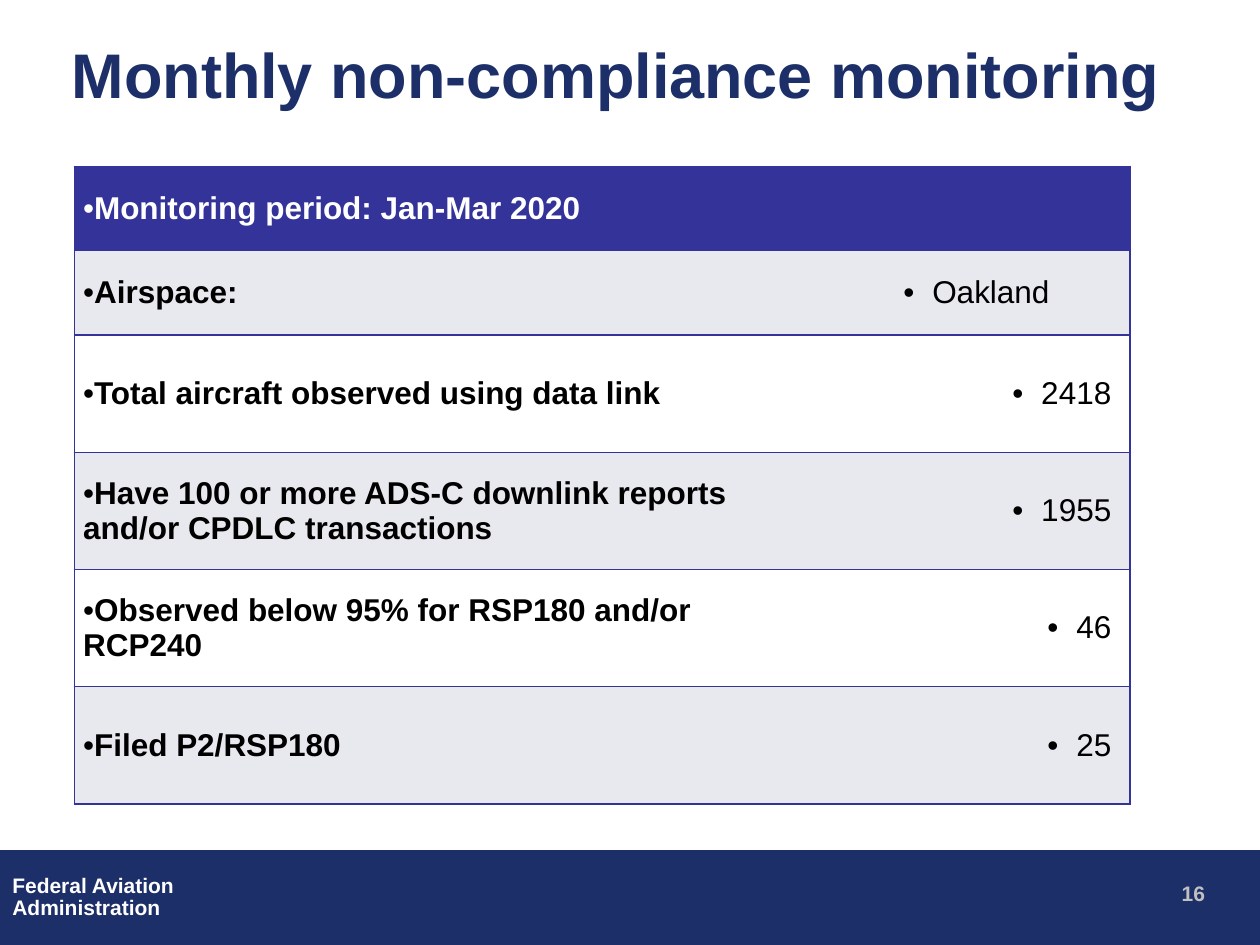
from typing import NamedTuple

from lxml import etree
from pptx import Presentation
from pptx.dml.color import RGBColor
from pptx.enum import shapes, text
from pptx.oxml import ns
from pptx.util import Inches, Pt

NAVY = RGBColor(0x1D, 0x2F, 0x68)
INDIGO = RGBColor(0x33, 0x33, 0x99)
PALE = RGBColor(0xE8, 0xE8, 0xEF)
SILVER = RGBColor(0xC0, 0xC0, 0xC0)
WHITE = RGBColor(0xFF, 0xFF, 0xFF)
BLACK = RGBColor(0, 0, 0)

LEFT, MID, RIGHT = text.PP_ALIGN.LEFT, text.PP_ALIGN.CENTER, text.PP_ALIGN.RIGHT


class Row(NamedTuple):
    label: str
    value: str
    height: float = 0.93
    align: text.PP_ALIGN = RIGHT
    pad: float = 0.15


ROWS = [
    Row("Monitoring period: Jan-Mar 2020", "", 0.67),
    Row("Airspace:", "Oakland", 0.67, MID, 0.07),
    Row("Total aircraft observed using data link", "2418"),
    Row("Have 100 or more ADS-C downlink reports and/or CPDLC transactions", "1955"),
    Row("Observed below 95% for RSP180 and/or RCP240", "46"),
    Row("Filed P2/RSP180", "25"),
]
COLS = [5.94, 2.44]


def style(para, size: float, color: RGBColor, bold: bool = True) -> None:
    font = para.font
    font.name, font.size, font.bold = "Arial", Pt(size), bold
    font.color.rgb = color


def add_bullet(para, hang: float) -> None:
    props = para._p.get_or_add_pPr()
    props.set("marL", str(Inches(hang)))
    props.set("indent", str(-Inches(hang)))
    etree.SubElement(props, ns.qn("a:buFont"), typeface="Arial")
    etree.SubElement(props, ns.qn("a:buChar"), char="•")


def set_edges(cell, shown: str) -> None:
    """Draw the sides named in shown (from L, R, T, B) and hide the others."""
    props = cell._tc.get_or_add_tcPr()
    for spot, side in enumerate("LRTB"):
        line = etree.Element(ns.qn(f"a:ln{side}"), w=str(Pt(1)))
        if side in shown:
            fill = etree.SubElement(line, ns.qn("a:solidFill"))
            etree.SubElement(fill, ns.qn("a:srgbClr"), val=str(INDIGO))
        else:
            etree.SubElement(line, ns.qn("a:noFill"))
        props.insert(spot, line)


def fill_cell(cell, words: str, fill: RGBColor, color: RGBColor, edges: str,
              bold: bool = True, align: text.PP_ALIGN = LEFT,
              side: float = 0.07, top: float = 0, hang: float = 0) -> None:
    cell.fill.solid()
    cell.fill.fore_color.rgb = fill
    set_edges(cell, edges)
    cell.vertical_anchor = text.MSO_ANCHOR.MIDDLE
    cell.margin_left = cell.margin_right = Inches(side)
    cell.margin_top = cell.margin_bottom = Inches(top)
    para = cell.text_frame.paragraphs[0]
    if words:
        para.text = words
        para.alignment = align
        add_bullet(para, hang)
    style(para, 18, color, bold)


def add_grid(slide) -> None:
    frame = slide.shapes.add_table(
        len(ROWS), len(COLS), Inches(0.59), Inches(1.32),
        Inches(sum(COLS)), Inches(sum(row.height for row in ROWS)))
    table = frame.table
    table.first_row = table.horz_banding = False
    for col, width in zip(table.columns, COLS):
        col.width = Inches(width)
    for i, row in enumerate(ROWS):
        table.rows[i].height = Inches(row.height)
        fill = INDIGO if i == 0 else PALE if i % 2 else WHITE
        color = WHITE if i == 0 else BLACK
        fill_cell(table.cell(i, 0), row.label, fill, color, "LTB")
        fill_cell(table.cell(i, 1), row.value, fill, color, "RTB", False, row.align,
                  row.pad, row.pad if row.align == RIGHT else 0, 0.23)


def add_note(slide, lines: list[str], left: float, top: float, width: float,
             height: float, color: RGBColor, wrap: bool, space: float) -> None:
    box = slide.shapes.add_textbox(
        Inches(left), Inches(top), Inches(width), Inches(height))
    frame = box.text_frame
    frame.word_wrap = wrap
    for i, line in enumerate(lines):
        para = frame.add_paragraph() if i else frame.paragraphs[0]
        para.text = line
        para.line_spacing = space
        style(para, 12, color)


def add_footer(slide) -> None:
    band = slide.shapes.add_shape(
        shapes.MSO_SHAPE.RECTANGLE, 0, Inches(6.75), Inches(10), Inches(0.75))
    band.shadow.inherit = False
    band.fill.solid()
    band.fill.fore_color.rgb = NAVY
    band.line.color.rgb = NAVY
    band.line.width = Pt(0.75)
    add_note(slide, ["Federal Aviation", "Administration"],
             0, 6.91, 1.5, 0.44, WHITE, False, 0.85)
    add_note(slide, ["16"], 9.28, 6.94, 0.6, 0.3, SILVER, True, 1)


def add_title(slide) -> None:
    title = slide.shapes.title
    title.left, title.top = Inches(0.47), Inches(0.25)
    title.width, title.height = Inches(9.27), Inches(0.67)
    frame = title.text_frame
    frame.text = "Monthly non-compliance monitoring"
    frame.vertical_anchor = text.MSO_ANCHOR.MIDDLE
    frame.auto_size = text.MSO_AUTO_SIZE.NONE
    para = frame.paragraphs[0]
    para.alignment = LEFT
    style(para, 36, NAVY)


def main() -> None:
    deck = Presentation()
    deck.slide_width, deck.slide_height = Inches(10), Inches(7.5)
    slide = deck.slides.add_slide(deck.slide_layouts[5])
    add_footer(slide)
    add_title(slide)
    add_grid(slide)
    deck.save("out.pptx")


if __name__ == "__main__":
    main()
